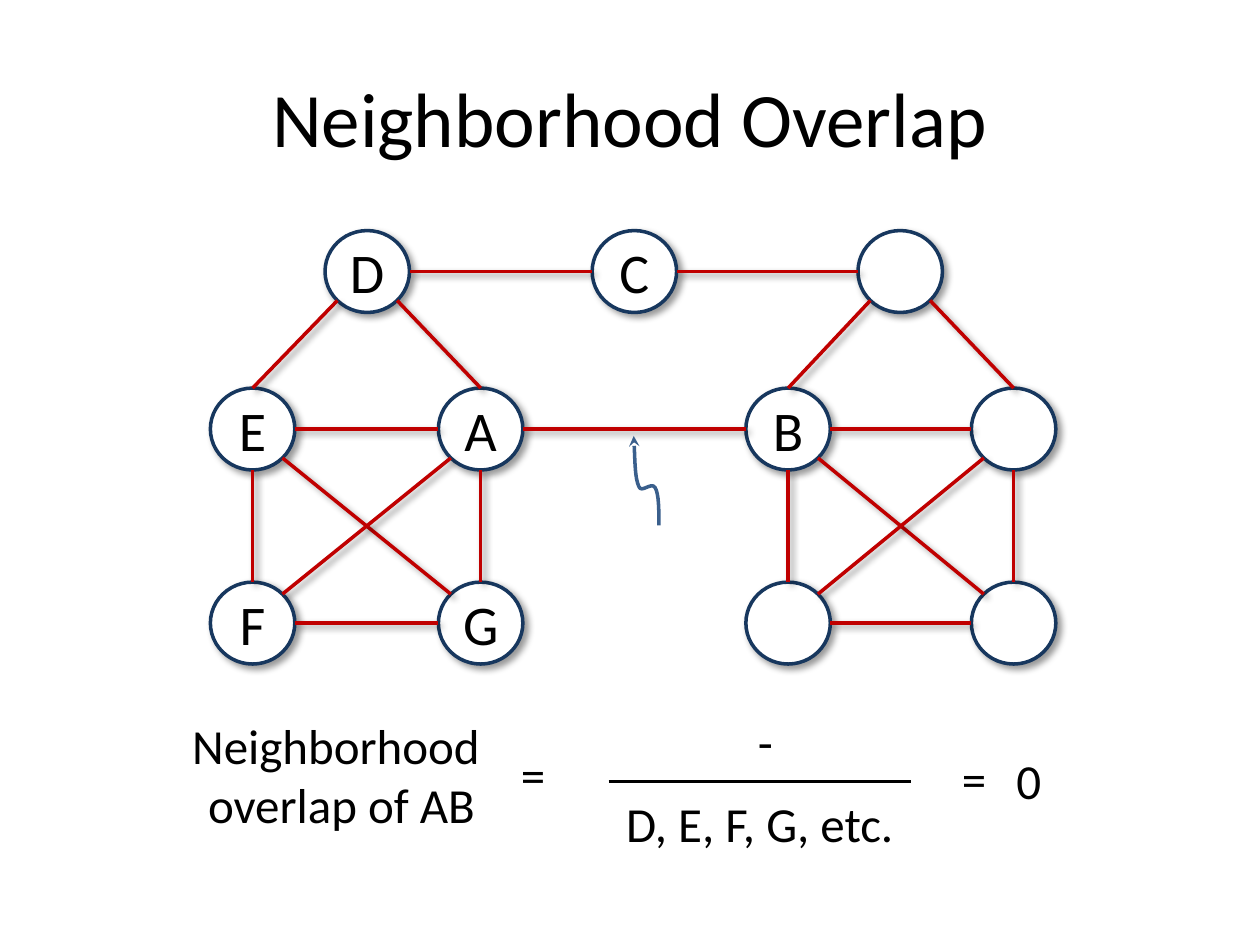
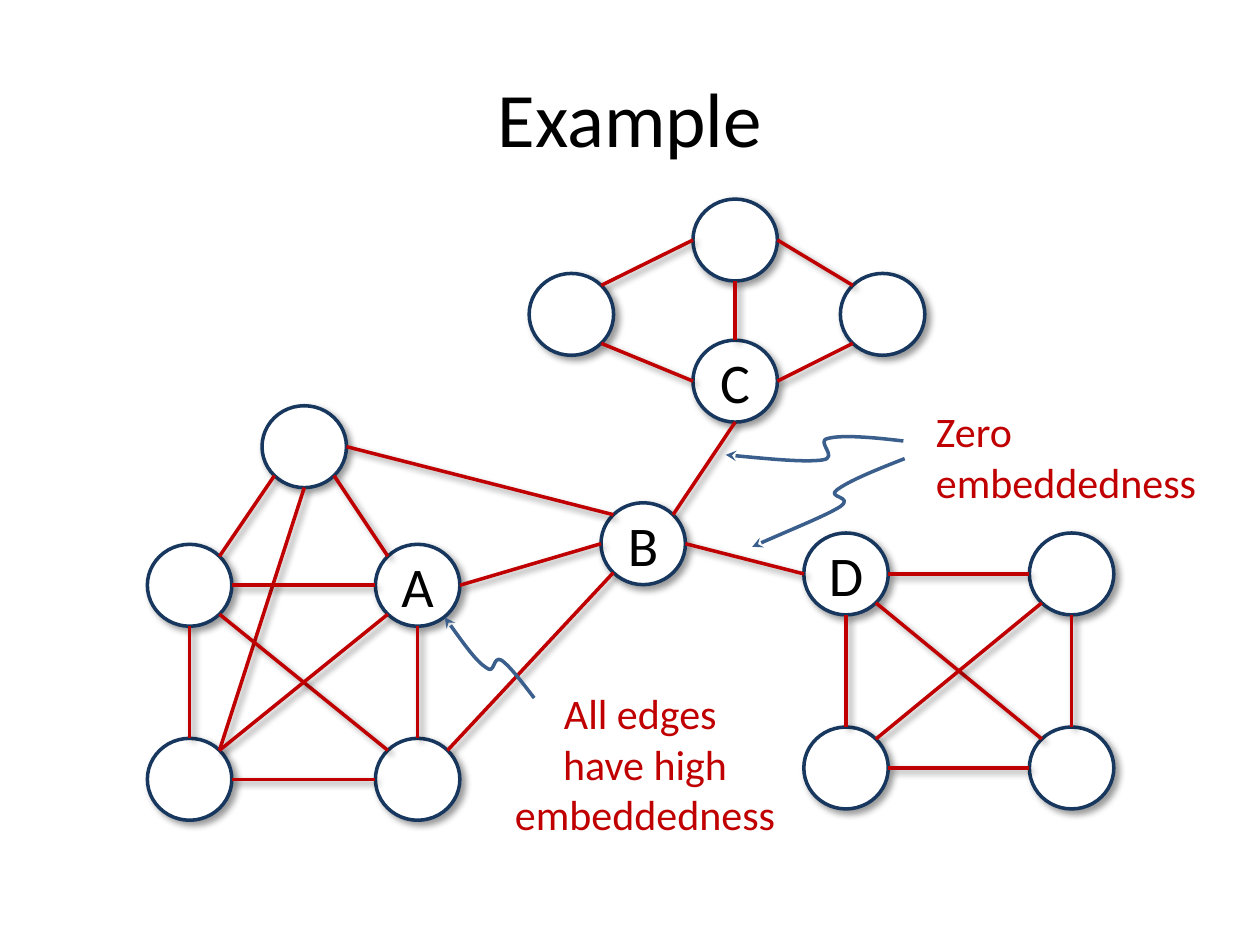
from dataclasses import dataclass
from math import cos, pi, sin

from lxml.etree import SubElement
from pptx import Presentation
from pptx.dml.color import RGBColor
from pptx.enum.shapes import MSO_CONNECTOR as Connector, MSO_SHAPE as Shape
from pptx.enum.text import MSO_ANCHOR as Anchor, MSO_AUTO_SIZE as AutoSize, PP_ALIGN as Align
from pptx.oxml.ns import qn
from pptx.util import Inches, Pt


@dataclass(frozen=True)
class Theme:
    font: str = "Calibri"
    ink: str = "000000"
    paper: str = "FFFFFF"
    edge: str = "C00000"
    outline: str = "17375E"
    pointer: str = "3A5F8C"
    title_size: int = 44
    node_size: int = 32
    formula_size: int = 28
    note_size: int = 24
    line_width: float = 2
    bar_width: float = 1.5


THEME = Theme()
TITLE_BOX = (0.5, 0.3, 9, 1.25)
NODE_WIDTH, NODE_HEIGHT = 0.67, 0.65
SQUARE_HEIGHT = 1.54
SITES = ("N", "NW", "W", "SW", "S", "SE", "E", "NE")
SQUARE_EDGES = [
    (0, "E", 1, "W"), (2, "E", 3, "W"),
    (0, "S", 2, "N"), (1, "S", 3, "N"),
    (0, "SE", 3, "NW"), (1, "SW", 2, "NE"),
]

SLIDES = [
    {
        "title": "Neighborhood Overlap",
        "squares": [
            (("E", "A", "F", "G"), 1.67, 3.08, 1.81),
            (("B", "right top", "right left", "right corner"), 5.92, 3.08, 1.79),
        ],
        "nodes": {"D": (2.58, 1.83), "C": (4.7, 1.83), "right roof": (6.81, 1.83)},
        "edges": [
            ("D", "SW", "E", "N"), ("D", "SE", "A", "N"),
            ("D", "E", "C", "W"), ("C", "E", "right roof", "W"),
            ("right roof", "SW", "B", "N"), ("right roof", "SE", "right top", "N"),
            ("A", "E", "B", "W"),
        ],
        "pointers": [
            [(5.23, 4.17), (5.23, 4.05), (5.23, 3.92), (5.2, 3.87), (5.17, 3.82),
             (5.09, 3.92), (5.07, 3.86), (5.04, 3.79), (5.04, 3.63), (5.03, 3.46)],
        ],
        "texts": [
            ("Neighborhood \voverlap of AB", (1.42, 5.63, 2.58, 1.04)),
            ("=", (4, 5.86, 0.46, 0.57)),
            ("-", (5.23, 5.6, 1.69, 0.57)),
            ("D, E, F, G, etc.", (4.83, 6.25, 2.4, 0.57)),
            ("0", (7.56, 5.91, 1.21, 0.57)),
            ("=", (7.5, 5.89, 0.46, 0.57)),
        ],
        "text_format": {"size": THEME.formula_size, "color": THEME.ink},
        "fraction_bars": [((4.83, 6.2), (7.23, 6.2))],
    },
    {
        "title": "Example",
        "squares": [
            (("left top", "A", "left corner", "left base"), 1.17, 4.32, 1.81),
            (("D", "right top", "right left", "right corner"), 6.38, 4.23, 1.79),
        ],
        "nodes": {
            "left roof": (2.08, 3.22), "B": (4.77, 3.99), "C": (5.5, 2.7),
            "peak": (5.5, 1.58), "peak left": (4.2, 2.17), "peak right": (6.67, 2.17),
        },
        "edges": [
            ("left roof", "SW", "left top", "NE"), ("left roof", "SE", "A", "NW"),
            ("left roof", "S", "left corner", "NE"), ("left roof", "E", "B", "NW"),
            ("A", "E", "B", "W"), ("left base", "NE", "B", "SW"),
            ("B", "NE", "C", "S"), ("B", "E", "D", "W"),
            ("C", "N", "peak", "S"),
            ("C", "W", "peak left", "SE"), ("C", "E", "peak right", "SW"),
            ("peak", "W", "peak left", "NE"), ("peak", "E", "peak right", "NW"),
        ],
        "pointers": [
            [(4.24, 5.54), (4.14, 5.41), (4.04, 5.28), (3.98, 5.24), (3.91, 5.2),
             (3.93, 5.36), (3.86, 5.3), (3.78, 5.25), (3.66, 5.08), (3.53, 4.9)],
            [(7.17, 3.5), (6.92, 3.47), (6.68, 3.45), (6.57, 3.48), (6.47, 3.5),
             (6.66, 3.63), (6.53, 3.65), (6.39, 3.67), (6.08, 3.64), (5.76, 3.61)],
            [(7.18, 3.64), (6.95, 3.73), (6.73, 3.82), (6.64, 3.89), (6.56, 3.95),
             (6.78, 3.94), (6.67, 4.02), (6.56, 4.09), (6.26, 4.21), (5.97, 4.34)],
        ],
        "texts": [
            ("All edges \vhave high embeddedness", (3.88, 5.41, 2.48, 1.31)),
            ("Zero embeddedness", (7.33, 3.17, 2.64, 0.91), Align.LEFT),
        ],
        "text_format": {"size": THEME.note_size, "color": THEME.edge},
        "fraction_bars": [],
    },
]


def inches(values):
    return [Inches(value) for value in values]


def write(shape, text, size, color=THEME.ink, align=Align.CENTER, **frame_format):
    frame = shape.text_frame
    frame.text = text
    for name, value in {"word_wrap": True, **frame_format}.items():
        setattr(frame, name, value)
    for paragraph in frame.paragraphs:
        paragraph.alignment = align
        for run in paragraph.runs:
            for name, value in {"name": THEME.font, "size": Pt(size)}.items():
                setattr(run.font, name, value)
            run.font.color.rgb = RGBColor.from_string(color)


def set_line(shape, color, width=THEME.line_width):
    shape.line.color.rgb = RGBColor.from_string(color)
    shape.line.width = Pt(width)


def set_shadow(shape, visible=True):
    effects = SubElement(shape.element.spPr, qn("a:effectLst"))
    if visible:
        values = {"blurRad": Pt(4), "dist": Pt(3), "dir": 45 * 60000,
                  "algn": "tl", "rotWithShape": 0}
        shadow = SubElement(effects, qn("a:outerShdw"),
                            {name: str(value) for name, value in values.items()})
        color = SubElement(shadow, qn("a:srgbClr"), val=THEME.ink)
        SubElement(color, qn("a:alpha"), val="40000")


def add_node(slide, name, left, top):
    node = slide.shapes.add_shape(Shape.OVAL, *inches((left, top, NODE_WIDTH, NODE_HEIGHT)))
    node.fill.solid()
    node.fill.fore_color.rgb = RGBColor.from_string(THEME.paper)
    set_line(node, THEME.outline)
    set_shadow(node)
    if name.isupper():
        write(node, name, THEME.node_size, vertical_anchor=Anchor.MIDDLE)
    return node


def site_point(node, site):
    angle = SITES.index(site) * pi / 4
    return (round(node.left + node.width * (1 - sin(angle)) / 2),
            round(node.top + node.height * (1 - cos(angle)) / 2))


def add_line(slide, start, end, color, width, shadow):
    line = slide.shapes.add_connector(Connector.STRAIGHT, *start, *end)
    set_line(line, color, width)
    set_shadow(line, shadow)
    return line


def add_edge(slide, start, start_site, end, end_site):
    edge = add_line(slide, site_point(start, start_site), site_point(end, end_site),
                    THEME.edge, THEME.line_width, True)
    joints = edge.element.nvCxnSpPr.cNvCxnSpPr
    for tag, node, site in (("a:stCxn", start, start_site), ("a:endCxn", end, end_site)):
        SubElement(joints, qn(tag), id=str(node.shape_id), idx=str(SITES.index(site)))


def add_pointer(slide, points):
    start, *rest = [inches(point) for point in points]
    builder = slide.shapes.build_freeform(*start)
    builder.add_line_segments(rest, close=False)
    pointer = builder.convert_to_shape()
    outline = next(pointer.element.iter(qn("a:moveTo"))).getparent()
    segments = outline.findall(qn("a:lnTo"))
    for first in range(0, len(segments), 3):
        curve = SubElement(outline, qn("a:cubicBezTo"))
        for segment in segments[first:first + 3]:
            curve.append(segment[0])
            outline.remove(segment)
    pointer.fill.background()
    set_line(pointer, THEME.pointer)
    SubElement(pointer.element.spPr.find(qn("a:ln")), qn("a:tailEnd"), type="stealth")
    set_shadow(pointer, False)


def add_text(slide, text_format, text, box, align=Align.CENTER):
    text_box = slide.shapes.add_textbox(*inches(box))
    write(text_box, text, align=align, auto_size=AutoSize.SHAPE_TO_FIT_TEXT, **text_format)


def add_graph(slide, content):
    places, edges = dict(content["nodes"]), list(content["edges"])
    for names, left, top, width in content["squares"]:
        for index, name in enumerate(names):
            row, column = divmod(index, 2)
            places[name] = (left + column * width, top + row * SQUARE_HEIGHT)
        edges += [(names[a], site_a, names[b], site_b) for a, site_a, b, site_b in SQUARE_EDGES]
    nodes = {name: add_node(slide, name, *place) for name, place in places.items()}
    for start, start_site, end, end_site in edges:
        add_edge(slide, nodes[start], start_site, nodes[end], end_site)


def add_slide(presentation, content):
    slide = presentation.slides.add_slide(presentation.slide_layouts.get_by_name("Title Only"))
    title = slide.shapes.title
    for name, value in zip(("left", "top", "width", "height"), inches(TITLE_BOX)):
        setattr(title, name, value)
    write(title, content["title"], THEME.title_size, vertical_anchor=Anchor.MIDDLE)
    add_graph(slide, content)
    for points in content["pointers"]:
        add_pointer(slide, points)
    for text in content["texts"]:
        add_text(slide, content["text_format"], *text)
    for start, end in content["fraction_bars"]:
        add_line(slide, inches(start), inches(end), THEME.ink, THEME.bar_width, False)


def main():
    presentation = Presentation()
    presentation.slide_width, presentation.slide_height = inches((10, 7.5))
    for content in SLIDES:
        add_slide(presentation, content)
    presentation.save("out.pptx")


if __name__ == "__main__":
    main()
